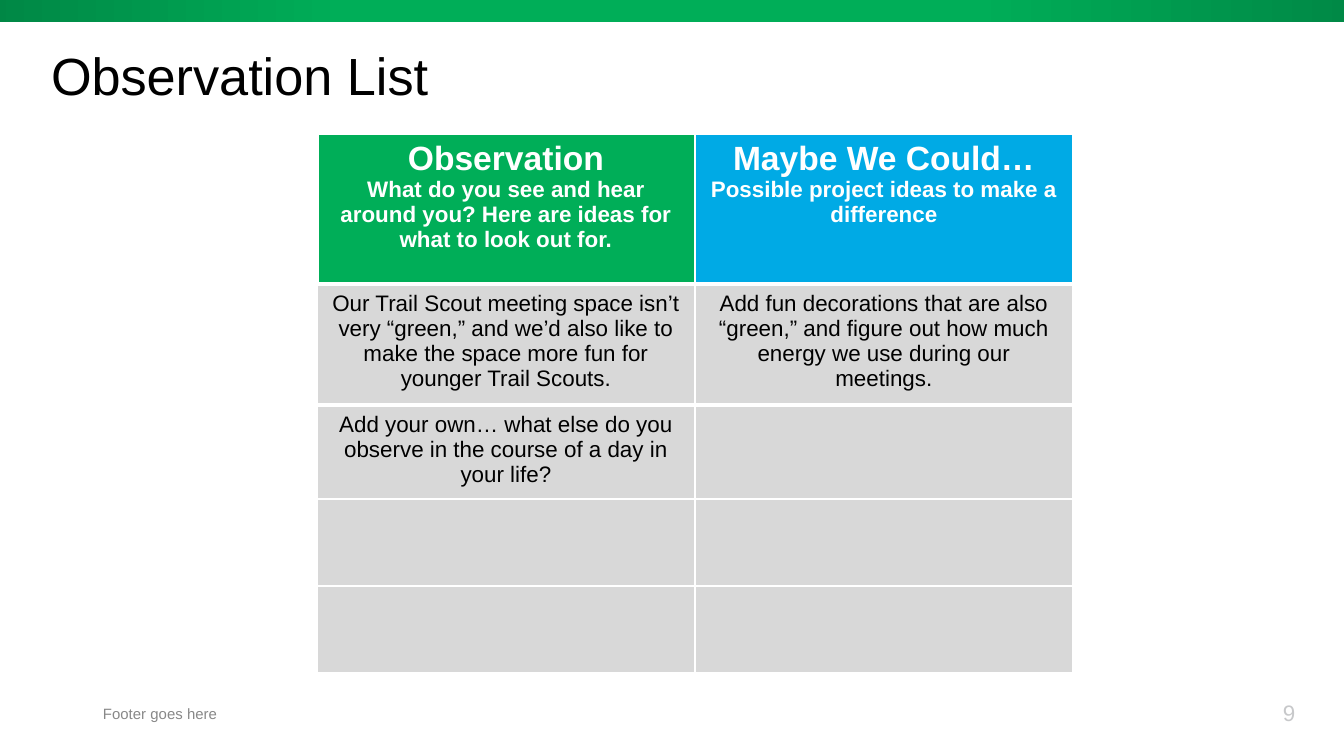
from pptx import Presentation
from pptx.dml.color import RGBColor
from pptx.enum.shapes import MSO_SHAPE
from pptx.enum.text import MSO_ANCHOR, PP_ALIGN
from pptx.oxml import parse_xml
from pptx.oxml.ns import nsdecls
from pptx.util import Pt

RECTANGLE = MSO_SHAPE.RECTANGLE
MIDDLE = MSO_ANCHOR.MIDDLE
CENTER = PP_ALIGN.CENTER
PX = 914400 / 134.4
TITLE_ONLY = 5

GREEN, DARK_GREEN, BLUE, GRAY = "00AE58", "008745", "00AAE5", "D8D8D8"
WHITE, BLACK = "FFFFFF", "000000"

TITLE = "Observation List"
FOOTER = "Footer goes here"
PAGE_NUMBER = "9"
BAR_STOPS = [(0, DARK_GREEN), (26, GREEN), (71, GREEN), (100, DARK_GREEN)]
HEADERS = [
    ("Observation",
     "What do you see and hear around you? Here are ideas for what to look out for.",
     GREEN),
    ("Maybe We Could…", "Possible project ideas to make a difference", BLUE),
]
ROWS = [
    ("Our Trail Scout meeting space isn’t very “green,” and we’d also like to make "
     "the space more fun for younger Trail Scouts.",
     "Add fun decorations that are also “green,” and figure out how much energy we "
     "use during our meetings."),
    ("Add your own… what else do you observe in the course of a day in your life?", ""),
    ("", ""),
    ("", ""),
]
TABLE_LEFT, TABLE_TOP = 317, 133
COLUMN_WIDTH = 378
ROW_HEIGHTS = [151, 114, 88, 87, 87]
THICK_RULES = (0, 1, 2)  # horizontal rules, counted from the top of the table

TITLE_FORMAT = {"size": Pt(28), "color": BLACK}
NUMBER_FORMAT = {"size": Pt(12), "color": "C7C8CA"}
FOOTER_FORMAT = {"size": Pt(8), "color": "888888"}
HEADING_FORMAT = {"size": Pt(18), "color": WHITE, "bold": True}
HINT_FORMAT = {"size": Pt(12), "color": WHITE, "bold": True}
BODY_FORMAT = {"size": Pt(12), "color": BLACK, "bold": False}


def px(*lengths):
    return [round(length * PX) for length in lengths]


def rgb(color):
    return RGBColor.from_string(color)


def write(para, text, style):
    span = para.add_run()
    span.text = text
    span.font.name = "Arial"
    for name, value in style.items():
        if name == "color":
            span.font.color.rgb = rgb(value)
        else:
            setattr(span.font, name, value)


def fill_frame(frame, text, style):
    """Write one line into a frame without margins, centred vertically."""
    frame.word_wrap = True
    frame.vertical_anchor = MIDDLE
    for side in ("left", "top", "right", "bottom"):
        setattr(frame, f"margin_{side}", 0)
    write(frame.paragraphs[0], text, style)


def add_bar(page):
    bar = page.shapes.add_shape(RECTANGLE, *px(-12, -1, 1384, 23))
    bar.shadow.inherit = False
    bar.line.fill.background()
    bar.fill.gradient()
    bar.fill.gradient_angle = 0
    stops = bar.fill.gradient_stops
    stop_list = bar.element.spPr.find(".//{*}gsLst")
    for old_stop in list(stop_list)[:len(stops)]:
        stop_list.remove(old_stop)
    for percent, color in BAR_STOPS:
        stop_list.append(parse_xml(
            f'<a:gs {nsdecls("a")} pos="{percent * 1000}">'
            f'<a:srgbClr val="{color}"/></a:gs>'))


def set_borders(cell, widths):
    """Draw white borders; widths maps L, R, T and B, in that order, to points."""
    properties = cell._tc.get_or_add_tcPr()
    for index, (side, width) in enumerate(widths.items()):
        properties.insert(index, parse_xml(
            f'<a:ln{side} {nsdecls("a")} w="{Pt(width)}"><a:solidFill>'
            f'<a:srgbClr val="{WHITE}"/></a:solidFill></a:ln{side}>'))


def add_observation_table(page):
    row_count, column_count = len(ROW_HEIGHTS), len(HEADERS)
    table = page.shapes.add_table(
        row_count, column_count,
        *px(TABLE_LEFT, TABLE_TOP, COLUMN_WIDTH * column_count, sum(ROW_HEIGHTS))).table
    for row, height in zip(table.rows, ROW_HEIGHTS):
        row.height = px(height)[0]
    for column in table.columns:
        column.width = px(COLUMN_WIDTH)[0]

    for r in range(row_count):
        for c, (heading, hint, header_fill) in enumerate(HEADERS):
            cell = table.cell(r, c)
            cell.fill.solid()
            cell.fill.fore_color.rgb = rgb(GRAY if r else header_fill)
            set_borders(cell, {
                "L": 3 if r == c == 0 else 1,
                "R": 1,
                "T": 3 if r in THICK_RULES else 1,
                "B": 3 if r + 1 in THICK_RULES else 1,
            })
            frame = cell.text_frame
            if r == 0:
                write(frame.paragraphs[0], heading, HEADING_FORMAT)
                write(frame.add_paragraph(), hint, HINT_FORMAT)
            elif ROWS[r - 1][c]:
                write(frame.paragraphs[0], ROWS[r - 1][c], BODY_FORMAT)
            for para in frame.paragraphs:
                para.alignment = CENTER


def main():
    deck = Presentation()
    deck.slide_width, deck.slide_height = px(1344, 756)
    page = deck.slides.add_slide(deck.slide_layouts[TITLE_ONLY])

    add_bar(page)
    title = page.shapes.title
    title.left, title.top, title.width, title.height = px(51, 28, 857, 105)
    fill_frame(title.text_frame, TITLE, TITLE_FORMAT)
    title.text_frame.paragraphs[0].alignment = PP_ALIGN.LEFT
    title.text_frame.paragraphs[0].line_spacing = 0.8

    for text, place, style in [
        (PAGE_NUMBER, (1283, 692, 60, 41), NUMBER_FORMAT),
        (FOOTER, (103, 702, 781, 23), FOOTER_FORMAT),
    ]:
        box = page.shapes.add_textbox(*px(*place))
        fill_frame(box.text_frame, text, style)

    add_observation_table(page)
    deck.save("out.pptx")


if __name__ == "__main__":
    main()
